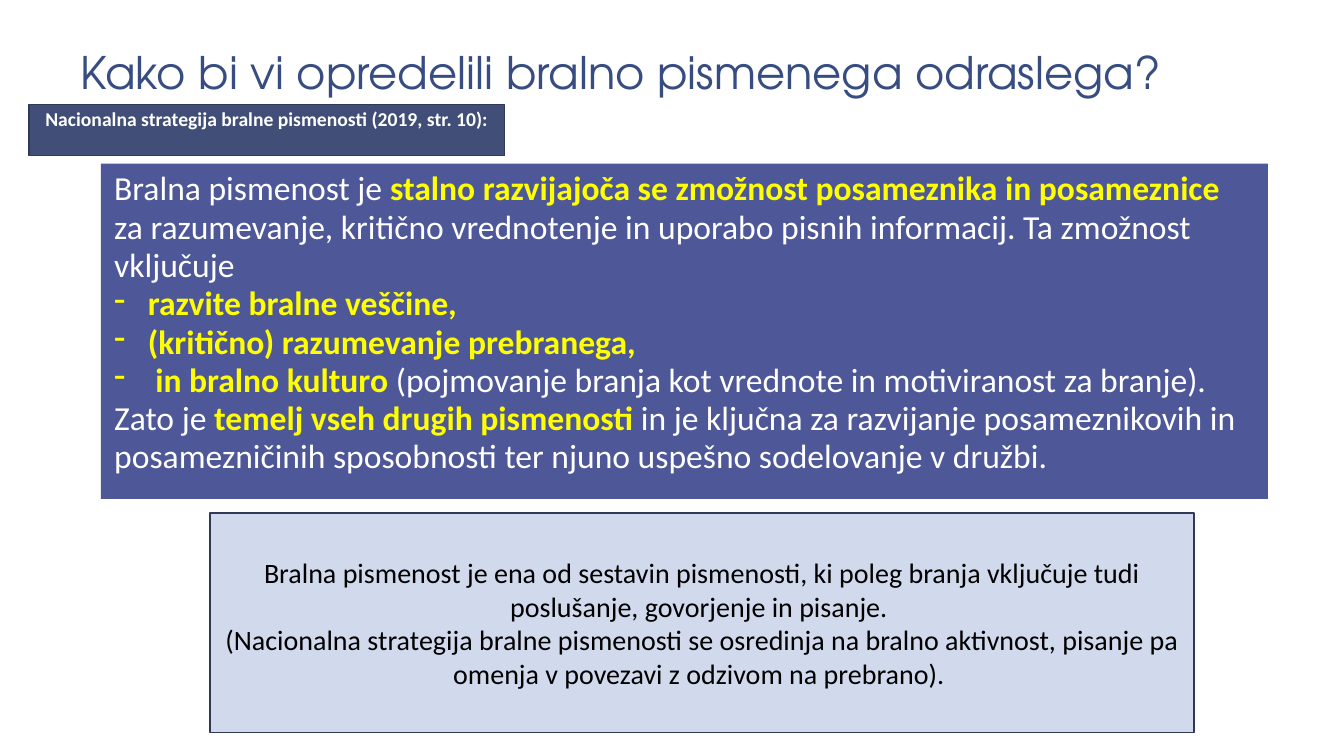
from lxml import etree
from pptx import Presentation
from pptx.dml.color import RGBColor
from pptx.enum import shapes, text
from pptx.oxml.ns import qn
from pptx.util import Pt

WHITE = RGBColor(0xFF, 0xFF, 0xFF)
BLACK = RGBColor(0x00, 0x00, 0x00)
YELLOW = RGBColor(0xFF, 0xFF, 0x00)
TITLE_BLUE = RGBColor(0x37, 0x4C, 0x81)
PANEL_BLUE = RGBColor(0x4E, 0x57, 0x98)
LABEL_BLUE = RGBColor(0x41, 0x4E, 0x77)
NOTE_BLUE = RGBColor(0xD1, 0xD9, 0xEC)
BORDER = RGBColor(0x30, 0x3A, 0x58)

prs = Presentation()
prs.slide_width, prs.slide_height = Pt(960), Pt(540)
s = prs.slides.add_slide(prs.slide_layouts[6])


def add_box(left, top, width, height, fill, line=None):
    sp = s.shapes.add_shape(shapes.MSO_SHAPE.RECTANGLE,
                            Pt(left), Pt(top), Pt(width), Pt(height))
    sp.shadow.inherit = False
    sp.fill.solid()
    sp.fill.fore_color.rgb = fill
    if line is None:
        sp.line.fill.background()
    else:
        sp.line.color.rgb = line
        sp.line.width = Pt(1)
    sp.text_frame.word_wrap = True
    return sp


def add_run(p, words, size, color, bold=False, font="Calibri"):
    r = p.add_run()
    r.text = words
    r.font.name, r.font.size, r.font.bold = font, Pt(size), bold
    r.font.color.rgb = color


# Title
sp = s.shapes.add_textbox(Pt(48), Pt(15), Pt(840), Pt(60))
tf = sp.text_frame
tf.word_wrap = True
tf.vertical_anchor = text.MSO_ANCHOR.BOTTOM
tf.margin_left = tf.margin_right = Pt(9.6)
tf.margin_top = tf.margin_bottom = Pt(4.8)
p = tf.paragraphs[0]
p.line_spacing = 0.85
add_run(p, "Kako bi vi opredelili bralno pismenega odraslega?", 32, TITLE_BLUE,
        font="TeX Gyre Adventor")

# Definition panel: (hanging indent, [(words, highlighted), ...]) per paragraph
definition = [
    (0, [("Bralna pismenost je ", False),
         ("stalno razvijajoča se zmožnost posameznika in posameznice ", True),
         ("za razumevanje, kritično vrednotenje in uporabo pisnih informacij. "
          "Ta zmožnost vključuje", False)]),
    (24, [("razvite bralne veščine,", True)]),
    (24, [("(kritično) razumevanje prebranega,", True)]),
    (29.4, [("in bralno kulturo ", True),
            ("(pojmovanje branja kot vrednote in motiviranost za branje).", False)]),
    (0, [("Zato je ", False),
         ("temelj vseh drugih pismenosti ", True),
         ("in je ključna za razvijanje posameznikovih in posamezničinih sposobnosti "
          "ter njuno uspešno sodelovanje v družbi.", False)]),
]
tf = add_box(72, 116.8, 833.6, 239.6, PANEL_BLUE).text_frame
tf.vertical_anchor = text.MSO_ANCHOR.TOP
tf.margin_left = tf.margin_right = Pt(9.6)
tf.margin_top = tf.margin_bottom = Pt(4.8)
for i, (indent, runs) in enumerate(definition):
    p = tf.add_paragraph() if i else tf.paragraphs[0]
    p.alignment = text.PP_ALIGN.LEFT
    p.line_spacing = 0.95
    if indent:
        pPr = p._p.get_or_add_pPr()
        pPr.set("marL", str(Pt(indent)))
        pPr.set("indent", str(Pt(-indent)))
        etree.SubElement(pPr, qn("a:buChar")).set("char", "-")
    for words, highlighted in runs:
        add_run(p, words, 24, YELLOW if highlighted else WHITE, highlighted)

# Note below the panel
note = [
    "Bralna pismenost je ena od sestavin pismenosti, ki poleg branja vključuje tudi "
    "poslušanje, govorjenje in pisanje. ",
    "(Nacionalna strategija bralne pismenosti se osredinja na bralno aktivnost, "
    "pisanje pa omenja v povezavi z odzivom na prebrano). ",
]
tf = add_box(150, 366.5, 703, 156.7, NOTE_BLUE, BORDER).text_frame
tf.vertical_anchor = text.MSO_ANCHOR.MIDDLE
for i, words in enumerate(note):
    p = tf.add_paragraph() if i else tf.paragraphs[0]
    p.alignment = text.PP_ALIGN.CENTER
    add_run(p, words, 20, BLACK)

# Source label
tf = add_box(20.6, 74.8, 340, 36.5, LABEL_BLUE, BORDER).text_frame
tf.vertical_anchor = text.MSO_ANCHOR.TOP
tf.margin_top = Pt(1.3)
p = tf.paragraphs[0]
p.alignment = text.PP_ALIGN.CENTER
add_run(p, "Nacionalna strategija bralne pismenosti (2019, str. 10):", 14, WHITE, True)

prs.save("out.pptx")
